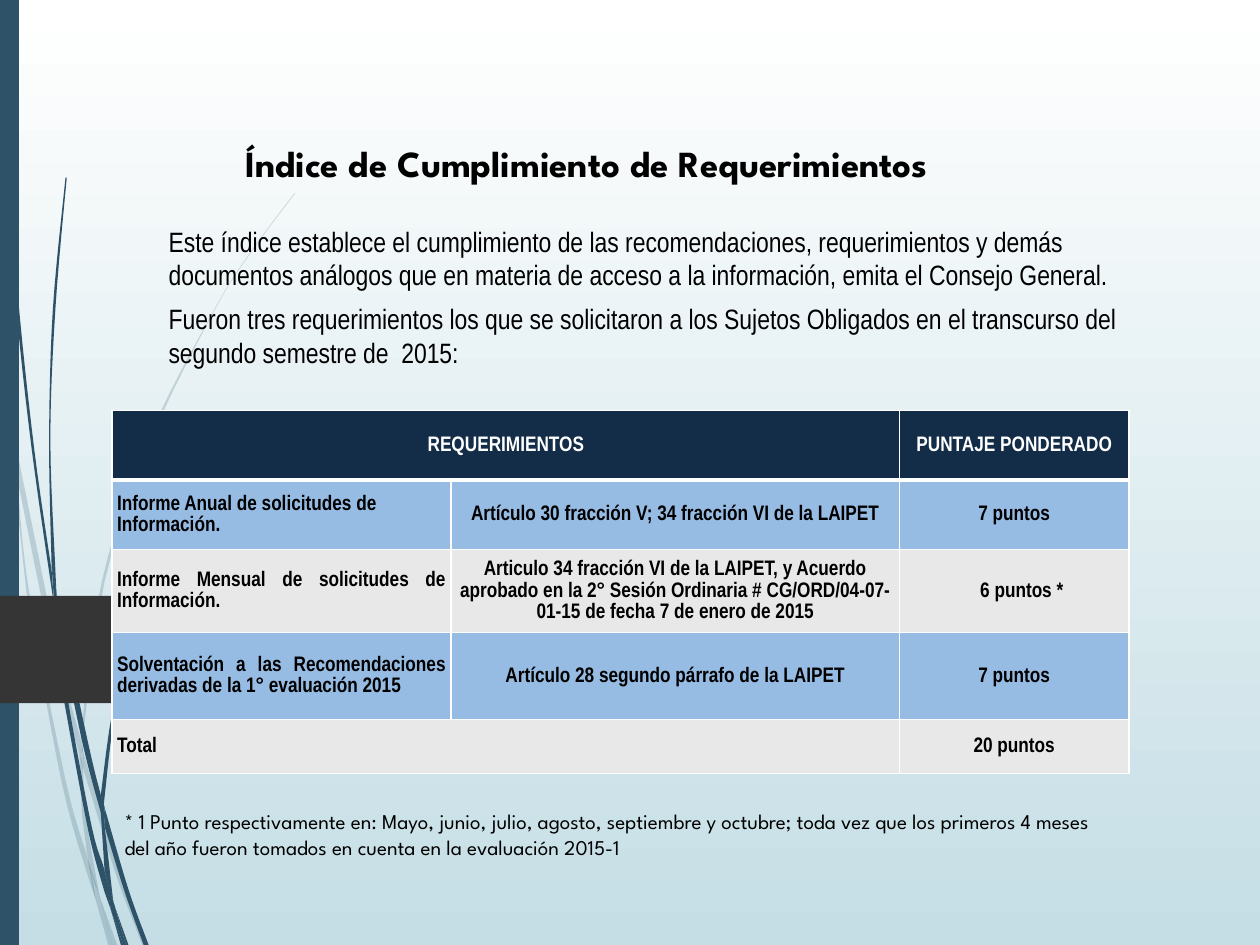
import collections
import itertools

import lxml.etree
import pptx
import pptx.dml.color
import pptx.enum.shapes
import pptx.enum.text
import pptx.oxml.ns
import pptx.util

Box = collections.namedtuple("Box", "left top width height")
ALIGN = pptx.enum.text.PP_ALIGN
ANCHOR = pptx.enum.text.MSO_ANCHOR
COLUMNS, ROWS = 100, 75
UNIT = pptx.util.Inches(0.1)
NARROW, DISPLAY = "Arial Narrow", "League Spartan"
COLORS = {
    "sky": "FFFFFF", "mist": "C5DEE5", "teal": "2E5369", "arrow": "353535",
    "ink": "000000", "white": "FFFFFF", "header": "132C48",
    "blue": "97BCE4", "gray": "E8E8E8",
}

# Each blade is a pair of edges, in grid units: one runs out, the other back.
PALE_BLADES = [
    ([(0.8, 35), (0.6, 32.2), (0, 28.2)], [(0, 29.9), (0.8, 34.4)]),
    ([(1.1, 34.5), (4.7, 52), (6.4, 58.6)], [(6.3, 59.9), (4.3, 52.2), (1.3, 37.6)]),
    ([(6.6, 59.6), (6.9, 60.7), (9.5, 69.2), (11.6, 75)],
     [(11.3, 75), (9.2, 69.4), (6.6, 61)]),
    ([(7.9, 71.1), (9.3, 75)], [(8.9, 75)]),
    ([(0.8, 35), (1.3, 37.6), (2.3, 46.9), (5.2, 61.9), (7, 68.3), (7.6, 71.4)],
     [(6.9, 69.3), (4.9, 62.1), (2.1, 47)]),
    ([(6.3, 59.9), (6.6, 61), (6.8, 64.6), (7.9, 71.1)],
     [(7.2, 69.2), (7, 68.3), (6.5, 64.6)]),
    ([(6.6, 59.6), (6.6, 58.4), (8.3, 46.2), (12, 34.9), (17.1, 24.5), (20.1, 19.8), (23.4, 15.4)],
     [(23.4, 15.3), (20.1, 19.7), (17.1, 24.4), (11.8, 34.8), (8.1, 46.1), (6.4, 58.4)]),
    ([(7.6, 71.4), (8.9, 75)], [(8.6, 75)]),
    ([(6.4, 58.6), (6.6, 59.6), (6.6, 61)], [(6.3, 59.9)]),
    ([(7, 68.3), (7.9, 71.1), (8.9, 75)], [(7.6, 71.4), (7.4, 70.7)]),
]
DARK_BLADES = [
    ([(0.2, 0), (0.3, 4.8), (0.5, 11), (1.2, 23.3), (2.5, 35.5), (4.3, 48.1)],
     [(4.1, 45.3), (2.7, 35.5), (1.4, 23.2), (0.6, 10.9), (0.3, 0)]),
    ([(4.5, 47.2), (7, 59), (8, 63.1)], [(8, 64.5), (6.6, 59.2), (4.8, 50.5)]),
    ([(8.3, 64.1), (10.2, 70.6), (11.8, 75)], [(11.4, 75), (9.9, 70.8), (8.3, 65.6)]),
    ([(4.3, 47.7), (4.8, 50.5), (5.4, 55.6), (7.3, 65.7), (8.3, 69.1), (8.8, 72.2)],
     [(8.3, 70.8), (7, 65.9), (5.1, 55.7)]),
    ([(4.5, 47.2), (4.4, 45.3), (4, 34.9), (4.4, 24.5), (5.3, 14.1)],
     [(5.2, 14.1), (4.2, 24.5), (3.9, 34.9), (4.1, 44.9)]),
    ([(9.1, 71.9), (10.2, 75)], [(10, 75)]),
    ([(4.1, 44.9), (4.5, 47.2), (4.8, 50.5)], [(4.3, 47.7)]),
    ([(8.3, 64.1), (8.3, 63.3), (9.4, 55.2), (11.9, 47.6), (15.3, 40.6), (19.6, 34.4)],
     [(19.5, 34.4), (15.3, 40.5), (11.7, 47.4), (9.2, 55.1), (8, 63.1)]),
    ([(8.8, 72.2), (9.8, 75)], [(9.6, 75)]),
    ([(8, 64.5), (8.3, 65.6), (9, 71.6), (9.1, 71.9)], [(8.7, 70.6), (8.3, 69.1)]),
    ([(8, 63.1), (8.3, 64.1), (8.3, 65.6)], [(8, 64.5)]),
    ([(8.3, 69.1), (9.1, 71.9), (10, 75)], [(9.8, 75), (8.8, 72.2)]),
]


def grid(*lengths):
    return [round(length * UNIT) for length in lengths]


def rgb(name):
    return pptx.dml.color.RGBColor.from_string(COLORS[name])


def paint(shape, color, opacity=100):
    shape.shadow.inherit = False
    shape.line.fill.background()
    shape.fill.solid()
    shape.fill.fore_color.rgb = rgb(color)
    if opacity < 100:
        tone = next(shape.element.iter(pptx.oxml.ns.qn("a:srgbClr")))
        lxml.etree.SubElement(tone, pptx.oxml.ns.qn("a:alpha"), val=str(opacity * 1000))


def smooth(points, steps=6):
    """Return points along a Catmull-Rom curve through the given ones."""
    padded = [points[0], *points, points[-1]]
    curve = []
    for a, b, c, d in zip(padded, padded[1:], padded[2:], padded[3:]):
        for t in (step / steps for step in range(steps)):
            curve.append(tuple(
                b[i] + t * (c[i] - a[i]) / 2
                + t ** 2 * (2 * a[i] - 5 * b[i] + 4 * c[i] - d[i]) / 2
                + t ** 3 * (3 * b[i] - a[i] - 3 * c[i] + d[i]) / 2
                for i in (0, 1)))
    return curve + [points[-1]]


def write(frame, texts, size=12, font=NARROW, color="ink", bold=False, align=ALIGN.LEFT,
          anchor=ANCHOR.TOP, before=0, spacing=None):
    """Fill a text frame with one paragraph for each text."""
    frame.word_wrap = True
    frame.vertical_anchor = anchor
    for index, text in enumerate(texts):
        para = frame.add_paragraph() if index else frame.paragraphs[0]
        para.alignment = align
        para.space_before = pptx.util.Pt(before)
        if spacing:
            para.line_spacing = spacing
        span = para.add_run()
        span.text = text
        span.font.size = pptx.util.Pt(size)
        span.font.name = font
        span.font.bold = bold
        span.font.color.rgb = rgb(color)


def add_background(page):
    fill = page.background.fill
    fill.gradient()
    fill.gradient_angle = 270
    for stop, name in zip(fill.gradient_stops, ("sky", "mist")):
        stop.color.rgb = rgb(name)


def add_blades(page, box, blades, opacity=100):
    group = page.shapes.add_group_shape()
    for out, back in blades:
        outline = [grid(box.left + x, box.top + y) for x, y in smooth(out) + smooth(back)]
        builder = group.shapes.build_freeform(*outline[0], scale=1.0)
        builder.add_line_segments(outline[1:], close=True)
        paint(builder.convert_to_shape(), "teal", opacity)


def add_side_art(page, box):
    add_blades(page, box, PALE_BLADES, opacity=20)
    add_blades(page, box, DARK_BLADES)
    kinds = pptx.enum.shapes.MSO_SHAPE
    bar = page.shapes.add_shape(kinds.RECTANGLE, *grid(box.left, box.top, 1.5, box.height))
    paint(bar, "teal")
    arrow = page.shapes.add_shape(kinds.PENTAGON, *grid(box.left, box.top + 47.3, 14.3, 8.5))
    arrow.adjustments[0] = 0.36
    paint(arrow, "arrow")


def add_text(page, box, *texts, top_inset=0.5, **style):
    frame = page.shapes.add_textbox(*grid(*box)).text_frame
    frame.margin_top = grid(top_inset)[0]
    write(frame, texts, **style)


def set_borders(cell, bottom=1):
    properties = cell._tc.get_or_add_tcPr()
    widths = {"a:lnL": 1, "a:lnR": 1, "a:lnT": 1, "a:lnB": bottom}
    for index, (tag, width) in enumerate(widths.items()):
        line = lxml.etree.Element(pptx.oxml.ns.qn(tag), w=str(pptx.util.Pt(width)))
        solid = lxml.etree.SubElement(line, pptx.oxml.ns.qn("a:solidFill"))
        lxml.etree.SubElement(solid, pptx.oxml.ns.qn("a:srgbClr"), val=COLORS["white"])
        properties.insert(index, line)


def add_score_table(page, box):
    rows = [
        ("REQUERIMIENTOS", "", "PUNTAJE PONDERADO"),
        ("Informe Anual de solicitudes de Información.",
         "Artículo 30 fracción V; 34 fracción VI de la LAIPET", "7 puntos"),
        ("Informe Mensual de solicitudes de Información.",
         "Articulo 34 fracción VI de la LAIPET, y Acuerdo aprobado en la 2° Sesión Ordinaria "
         "# CG/ORD/04-07-01-15 de fecha 7 de enero de 2015", "6 puntos *"),
        ("Solventación a las Recomendaciones derivadas de la 1° evaluación 2015",
         "Artículo 28 segundo párrafo de la LAIPET", "7 puntos"),
        ("Total", "", "20 puntos"),
    ]
    fills = ("header", "blue", "gray", "blue", "gray")
    table = page.shapes.add_table(len(rows), 3, *grid(*box)).table
    for column, width in zip(table.columns, grid(26.9, 35.6, 18.2)):
        column.width = width
    for row, height in zip(table.rows, grid(5.5, 5.5, 6.6, 6.9, 4.3)):
        row.height = height
    for r, c in itertools.product(range(len(rows)), range(3)):
        cell, text, header = table.cell(r, c), rows[r][c], r == 0
        cell.margin_left = cell.margin_right = grid(0.4)[0]
        cell.margin_top = cell.margin_bottom = 0
        cell.fill.solid()
        cell.fill.fore_color.rgb = rgb(fills[r])
        set_borders(cell, bottom=3 if header else 1)
        cell.vertical_anchor = ANCHOR.MIDDLE
        if text:
            side = ALIGN.LEFT if r == 1 else ALIGN.JUSTIFY
            write(cell.text_frame, [text], bold=True, spacing=1.07, anchor=None,
                  color="white" if header else "ink",
                  align=ALIGN.CENTER if header or c else side)
        cell.vertical_anchor = ANCHOR.MIDDLE
    table.cell(2, 2).margin_left = grid(1.6)[0]
    for r in (0, len(rows) - 1):
        table.cell(r, 0).merge(table.cell(r, 1))


def main():
    deck = pptx.Presentation()
    deck.slide_width, deck.slide_height = grid(COLUMNS, ROWS)
    page = deck.slides.add_slide(deck.slide_layouts[6])
    add_background(page)
    add_side_art(page, Box(0, 0, 23.4, ROWS))
    add_text(page, Box(12.4, 6.3, 68.3, 8.9), "Índice de Cumplimiento de Requerimientos",
             size=21, font=DISPLAY, bold=True, align=ALIGN.CENTER, anchor=ANCHOR.BOTTOM)
    add_text(page, Box(12.4, 17.8, 78.4, 13.6),
             "Este índice establece el cumplimiento de las recomendaciones, requerimientos y demás "
             "documentos análogos que en materia de acceso a la información, emita el Consejo General.",
             "Fueron tres requerimientos los que se solicitaron a los Sujetos Obligados en el "
             "transcurso del segundo semestre de  2015:",
             size=16, before=6, top_inset=0)
    add_score_table(page, Box(8.9, 32.6, 80.7, 28.8))
    add_text(page, Box(8.9, 62.6, 80.7, 6.1),
             "* 1 Punto respectivamente en: Mayo, junio, julio, agosto, septiembre y octubre; toda vez "
             "que los primeros 4 meses del año fueron tomados en cuenta en la evaluación 2015-1",
             font=DISPLAY, anchor=ANCHOR.BOTTOM)
    deck.save("out.pptx")


if __name__ == "__main__":
    main()
